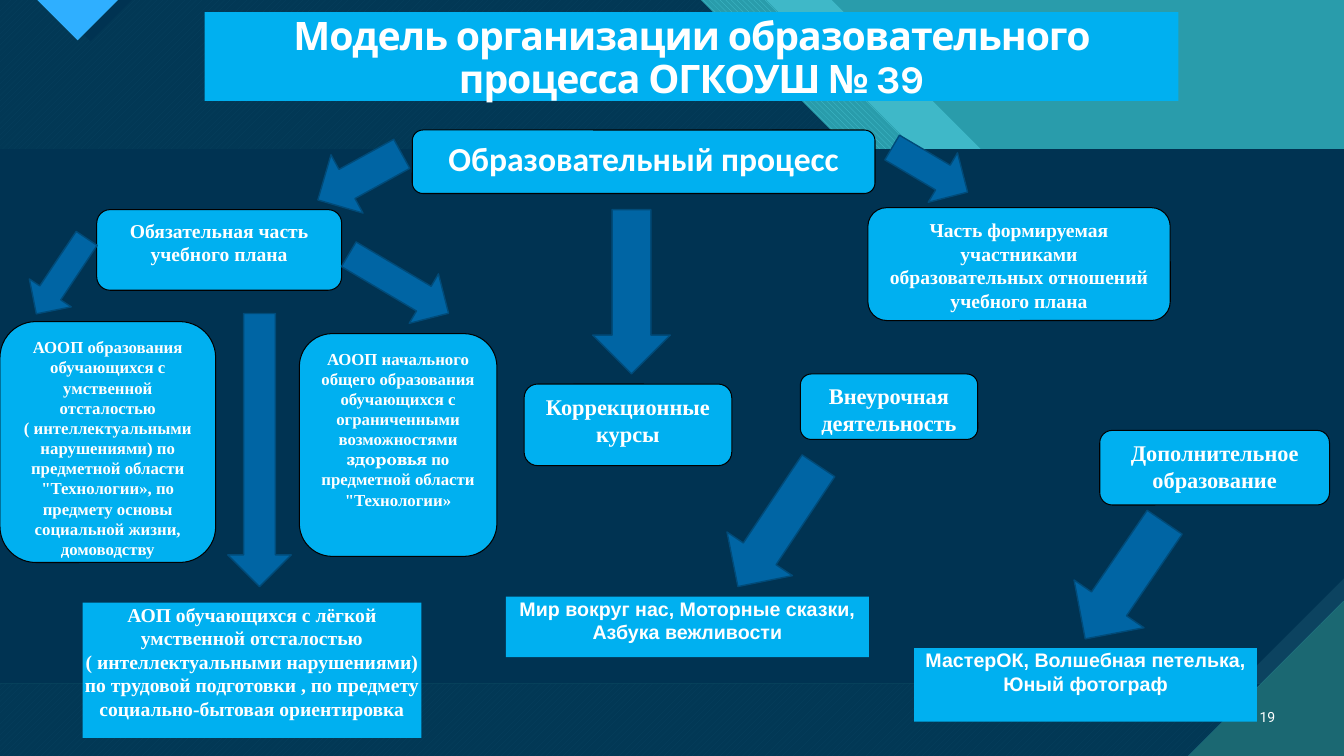
from lxml import etree
from pptx import Presentation
from pptx.dml.color import RGBColor
from pptx.enum.dml import MSO_PATTERN
from pptx.enum.shapes import MSO_SHAPE
from pptx.enum.text import MSO_ANCHOR, PP_ALIGN
from pptx.oxml.ns import qn
from pptx.util import Inches, Pt

RECT, ROUND = MSO_SHAPE.RECTANGLE, MSO_SHAPE.ROUNDED_RECTANGLE
SNIP, DOWN = MSO_SHAPE.SNIP_1_RECTANGLE, MSO_SHAPE.DOWN_ARROW
FALL, RISE = MSO_PATTERN.WIDE_DOWNWARD_DIAGONAL, MSO_PATTERN.WIDE_UPWARD_DIAGONAL
HORZ, VERT = MSO_PATTERN.DARK_HORIZONTAL, MSO_PATTERN.DARK_VERTICAL
TOP, MIDDLE = MSO_ANCHOR.TOP, MSO_ANCHOR.MIDDLE
CENTER, RIGHT = PP_ALIGN.CENTER, PP_ALIGN.RIGHT

WHITE = RGBColor(0xFF, 0xFF, 0xFF)
BLACK = RGBColor(0x00, 0x00, 0x00)
SKY = RGBColor(0x00, 0xB0, 0xF0)
BLUE = RGBColor(0x00, 0x65, 0xA4)
EDGE = RGBColor(0x00, 0x4B, 0x79)
NAVY = RGBColor(0x00, 0x33, 0x52)
STEEL = RGBColor(0x0C, 0x43, 0x60)
TEAL = RGBColor(0x29, 0x9C, 0xAB)
AQUA = RGBColor(0x47, 0xC3, 0xD3)
PINE = RGBColor(0x1B, 0x68, 0x72)
AZURE = RGBColor(0x2F, 0xAF, 0xFF)

TIMES, SCHOLA = "Times New Roman", "TeX Gyre Schola"
COLS, ROWS = 133.33, 75
PAD = (1, 0.5, 1, 0.5)
BARE = (0, 0, 0, 0)


def cell(*sizes):
    """Turn grid steps of a tenth of an inch into lengths."""
    return [Inches(size / 10) for size in sizes]


def paint(shape, color, alpha=None, weave=None, back=None, edge=None, width=1):
    """Fill and outline a shape without a shadow."""
    shape.shadow.inherit = False
    fill = shape.fill
    if weave is None:
        fill.solid()
        fill.fore_color.rgb = color
    else:
        fill.patterned()
        fill.pattern = weave
        fill.fore_color.rgb = color
        fill.back_color.rgb = back
    if alpha:
        tint = shape._element.spPr.find(".//" + qn("a:srgbClr"))
        etree.SubElement(tint, qn("a:alpha")).set("val", str(alpha * 1000))
    if edge is None:
        shape.line.fill.background()
    else:
        shape.line.color.rgb = edge
        shape.line.width = Pt(width)
    return shape


def block(slide, kind, at, color, **look):
    """Add a painted preset shape."""
    return paint(slide.shapes.add_shape(kind, *cell(*at)), color, **look)


def facet(slide, points, color, **look):
    """Add a painted polygon."""
    first, *rest = [cell(*point) for point in points]
    form = slide.shapes.build_freeform(*first)
    form.add_line_segments(rest)
    return paint(form.convert_to_shape(), color, **look)


def write(shape, paras, size, face, pad=PAD, align=CENTER, bold=True, anchor=TOP):
    """Write paragraphs; every second piece of one is set in Schola."""
    frame = shape.text_frame
    frame.word_wrap = True
    frame.vertical_anchor = anchor
    (frame.margin_left, frame.margin_top,
     frame.margin_right, frame.margin_bottom) = cell(*pad)
    for i, pieces in enumerate(paras):
        para = frame.paragraphs[0] if i == 0 else frame.add_paragraph()
        para.alignment = align
        font = para.font
        font.size, font.bold, font.name = Pt(size), bold, face
        font.color.rgb = WHITE
        pieces = [pieces] if isinstance(pieces, str) else pieces
        for j, piece in enumerate(pieces):
            run = para.add_run()
            run.text = piece
            if len(pieces) > 1:
                run.font.name = SCHOLA if j % 2 else face


def card(slide, at, paras, size, face=TIMES):
    """Add a rounded box with a black edge."""
    write(block(slide, ROUND, at, SKY, edge=BLACK, width=0.75), paras, size, face)


def label(slide, at, paras, face):
    """Add a plain box with tight text."""
    write(block(slide, RECT, at, SKY), paras, 14, face, BARE)


def arrow(slide, at, turn=0):
    """Add a block arrow turned by some degrees."""
    block(slide, DOWN, at, BLUE, edge=EDGE).rotation = turn


def wedge(left, step, tip, corner):
    """Give the slide area left of a diagonal cut."""
    return [(0, 0), (left, 0), (left + step, step), (tip, step),
            (COLS, corner), (COLS, ROWS), (0, ROWS)]


def scene(slide):
    """Lay the layered background."""
    block(slide, RECT, (0, 0, COLS, ROWS), TEAL)
    facet(slide, wedge(82.5, 29.7, 123.4, 39.6), AQUA, alpha=74)
    facet(slide, wedge(76, 29.8, 118.4, 44.7), AQUA, weave=FALL, back=TEAL)
    main_cut = wedge(69.5, 29.7, 111.8, 51.2)
    facet(slide, main_cut, AQUA, weave=RISE, back=PINE)
    facet(slide, main_cut, NAVY, alpha=90)
    facet(slide, [(13.1, 0), (9, 4.1), (4.8, 0)], NAVY)
    facet(slide, [(3.7, 0), (7.7, 4), (11.7, 0)], AZURE, weave=HORZ, back=PINE)
    band = (0, 14.8, COLS, 53)
    block(slide, RECT, band, STEEL, weave=VERT, back=PINE)
    snip = block(slide, SNIP, band, NAVY)
    snip.adjustments[0] = 0.197
    snip._element.spPr.xfrm.set("flipV", "1")
    facet(slide, [(117.9, ROWS), (COLS, ROWS), (COLS, 59.6)],
          PINE, weave=HORZ, back=AQUA)


def head(slide):
    """Add the title bar and the page number."""
    bar = block(slide, RECT, (20.3, 1.2, 96.6, 8.8), SKY)
    write(bar, ["Модель организации образовательного процесса ОГКОУШ № 39"],
          28, "Karla")
    para = bar.text_frame.paragraphs[0]
    para.line_spacing = 0.9
    para.font._element.set("spc", "-70")
    page = slide.shapes.add_textbox(*cell(123.1, 69.1, 4.4, 4))
    write(page, ["19"], 10, "Roboto", align=RIGHT, bold=False, anchor=MIDDLE)


def main():
    """Build the slide and save it."""
    deck = Presentation()
    deck.slide_width, deck.slide_height = cell(COLS, ROWS)
    slide = deck.slides.add_slide(deck.slide_layouts[6])
    scene(slide)
    head(slide)

    label(slide, (8.2, 59.8, 33.6, 13.4),
          ["АОП обучающихся с лёгкой умственной отсталостью",
           "( интеллектуальными нарушениями) по трудовой подготовки , "
           "по предмету социально-бытовая ориентировка"], TIMES)
    label(slide, (90.7, 64.3, 34, 7.3),
          ["МастерОК, Волшебная петелька, Юный фотограф"], "Arial")
    label(slide, (50.2, 59.2, 36, 6),
          ["Мир вокруг нас, Моторные сказки, Азбука вежливости"], "Arial")

    card(slide, (40.9, 12.9, 45.9, 6.3), ["Образовательный процесс"], 24, "Calibri")
    card(slide, (9.6, 20.8, 24.3, 8), ["Обязательная часть учебного плана"], 14)
    card(slide, (86.1, 20.6, 30, 11.2),
         ["Часть формируемая участниками образовательных отношений "
          "учебного плана"], 14)
    card(slide, (0, 31.9, 21.4, 23.9),
         ["АООП образования обучающихся с умственной отсталостью "
          "( интеллектуальными нарушениями) по предметной области "
          "\"Технологии», по предмету основы социальной жизни, домоводству"], 12)
    card(slide, (29.7, 33.1, 19.6, 22.1),
         [("АООП начального общего образования обучающихся с "
           "ограниченными возможностями", " здоровья",
           " по предметной области \"Технологии»")], 12)
    card(slide, (52, 38.1, 20.6, 8.1), ["Коррекционные", "курсы"], 16)
    card(slide, (79.4, 37.1, 17.6, 6.5), ["Внеурочная деятельность"], 16)
    card(slide, (109.1, 42.7, 22.8, 7.4), ["Дополнительное образование"], 16)

    arrow(slide, (32.4, 12.8, 6.6, 9.5), 61.2)
    arrow(slide, (36.7, 22.4, 5.7, 11.5), 300.6)
    arrow(slide, (58.8, 20.8, 7.7, 16.3))
    arrow(slide, (22.6, 31.1, 6.3, 27.1))
    arrow(slide, (73.3, 45, 7.8, 14.4), 33.7)
    arrow(slide, (107.4, 50.6, 8.4, 14), 34.3)
    arrow(slide, (3.6, 22.9, 5, 9), 33.7)
    arrow(slide, (89.4, 12.5, 5.7, 8.7), 300.6)
    deck.save("out.pptx")


if __name__ == "__main__":
    main()
